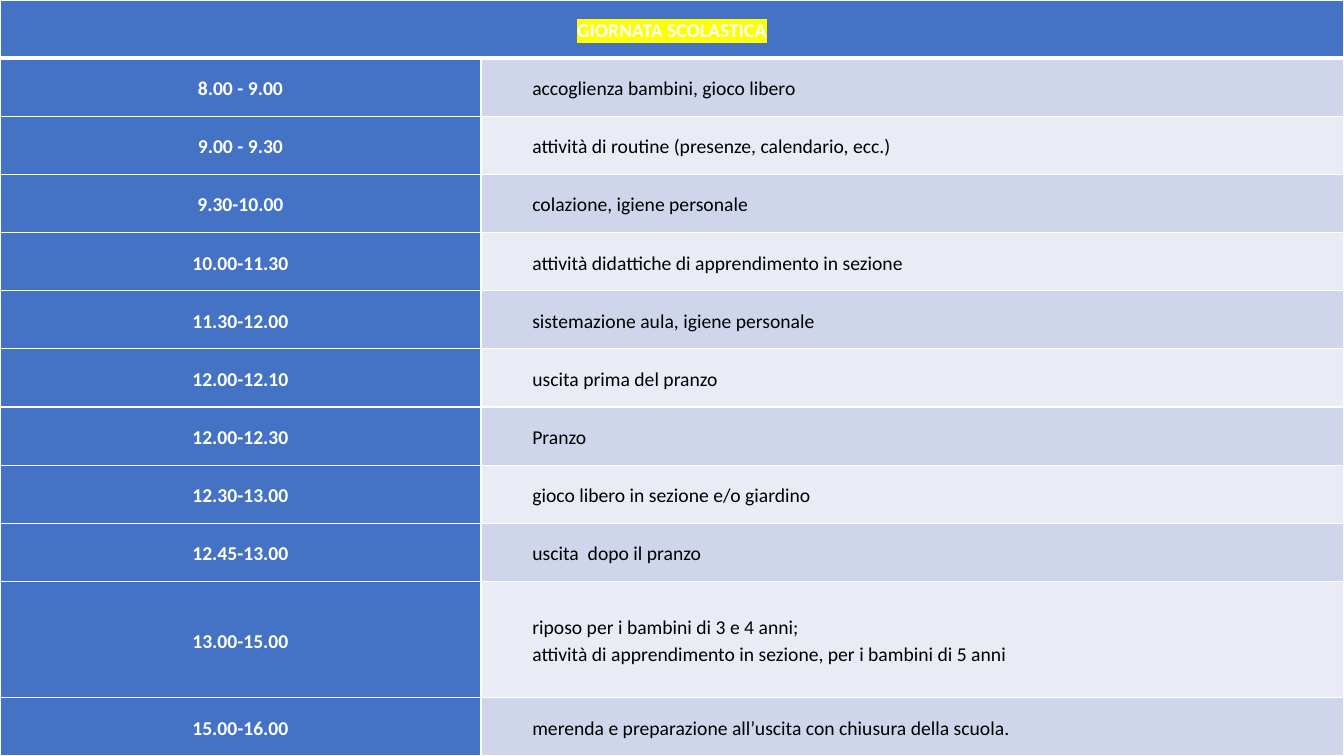
from lxml import etree
from pptx import Presentation
from pptx.dml.color import RGBColor
from pptx.enum.text import MSO_ANCHOR, PP_ALIGN
from pptx.oxml.ns import qn
from pptx.util import Inches, Pt

MIDDLE = MSO_ANCHOR.MIDDLE
CENTER, LEFT = PP_ALIGN.CENTER, PP_ALIGN.LEFT

COLORS = {
    "blue": "4472C4",
    "dark_band": "CFD5EA",
    "light_band": "E9EBF5",
    "white": "FFFFFF",
    "black": "000000",
    "yellow": "FFFF00",
}
WIDTH, HEIGHT = 13.33, 7.5
COLS = (4.77, 8.56)
TITLE = "GIORNATA SCOLASTICA"
HOURS = [
    ("8.00 - 9.00", "accoglienza bambini, gioco libero"),
    ("9.00 - 9.30", "attività di routine (presenze, calendario, ecc.)"),
    ("9.30-10.00", "colazione, igiene personale"),
    ("10.00-11.30", "attività didattiche di apprendimento in sezione"),
    ("11.30-12.00", "sistemazione aula, igiene personale"),
    ("12.00-12.10", "uscita prima del pranzo"),
    ("12.00-12.30", "Pranzo"),
    ("12.30-13.00", "gioco libero in sezione e/o giardino"),
    ("12.45-13.00", "uscita  dopo il pranzo"),
    ("13.00-15.00", "riposo per i bambini di 3 e 4 anni;\n"
                    "attività di apprendimento in sezione, per i bambini di 5 anni"),
    ("15.00-16.00", "merenda e preparazione all’uscita con chiusura della scuola."),
]
HEAD = {"color": "white", "bold": True, "align": CENTER, "indent": 0}
BODY = {"color": "black", "bold": False, "align": LEFT, "indent": 0.5}
CELL = {"vertical_anchor": MIDDLE}
CELL.update({f"margin_{side}": Inches(0.01)
             for side in ("left", "right", "top", "bottom")})


def rgb(name):
    return RGBColor.from_string(COLORS[name])


def add_color(parent, name):
    etree.SubElement(parent, qn("a:srgbClr"), val=COLORS[name])


def set_edges(cell, widths):
    props = cell._tc.get_or_add_tcPr()
    for side in "LRTB":
        line = etree.SubElement(props, qn(f"a:ln{side}"),
                                w=str(Pt(widths.get(side, 1))))
        add_color(etree.SubElement(line, qn("a:solidFill")), "white")


def mark_text(run, name):
    mark = etree.Element(qn("a:highlight"))
    add_color(mark, name)
    run.font._element.find(qn("a:solidFill")).addnext(mark)


def fill_cell(cell, text, fill, style, edges):
    for key, value in CELL.items():
        setattr(cell, key, value)
    set_edges(cell, edges)
    cell.fill.solid()
    cell.fill.fore_color.rgb = rgb(fill)
    cell.text = text
    font = {"name": "Calibri", "size": Pt(14), "bold": style["bold"]}
    for para in cell.text_frame.paragraphs:
        para.alignment = style["align"]
        para.line_spacing = 1.15
        props = para._p.get_or_add_pPr()
        props.set("marL", str(Inches(style["indent"])))
        props.set("indent", "0")
        for run in para.runs:
            for key, value in font.items():
                setattr(run.font, key, value)
            run.font.color.rgb = rgb(style["color"])


def add_grid(slide):
    units = [1] + [1 + text.count("\n") for _, text in HOURS]
    frame = slide.shapes.add_table(len(units), len(COLS), 0, 0,
                                   Inches(WIDTH), Inches(HEIGHT))
    table = frame.table
    for col, width in zip(table.columns, COLS):
        col.width = Inches(width)
    for row, unit in zip(table.rows, units):
        row.height = Inches(HEIGHT * unit / sum(units))
    return table


def main():
    deck = Presentation()
    deck.slide_width, deck.slide_height = Inches(WIDTH), Inches(HEIGHT)
    slide = deck.slides.add_slide(deck.slide_layouts[6])
    table = add_grid(slide)

    # Heading across both columns
    for col, text in enumerate((TITLE, "")):
        fill_cell(table.cell(0, col), text, "blue", HEAD, {"B": 3})
    top = table.cell(0, 0)
    top.merge(table.cell(0, 1))
    mark_text(top.text_frame.paragraphs[0].runs[0], "yellow")

    # Hours and activities
    for row, (hour, text) in enumerate(HOURS, 1):
        edges = {"T": 3} if row == 1 else {}
        band = "dark_band" if row % 2 else "light_band"
        fill_cell(table.cell(row, 0), hour, "blue", HEAD, edges)
        fill_cell(table.cell(row, 1), text, band, BODY, edges)

    deck.save("out.pptx")


if __name__ == "__main__":
    main()
